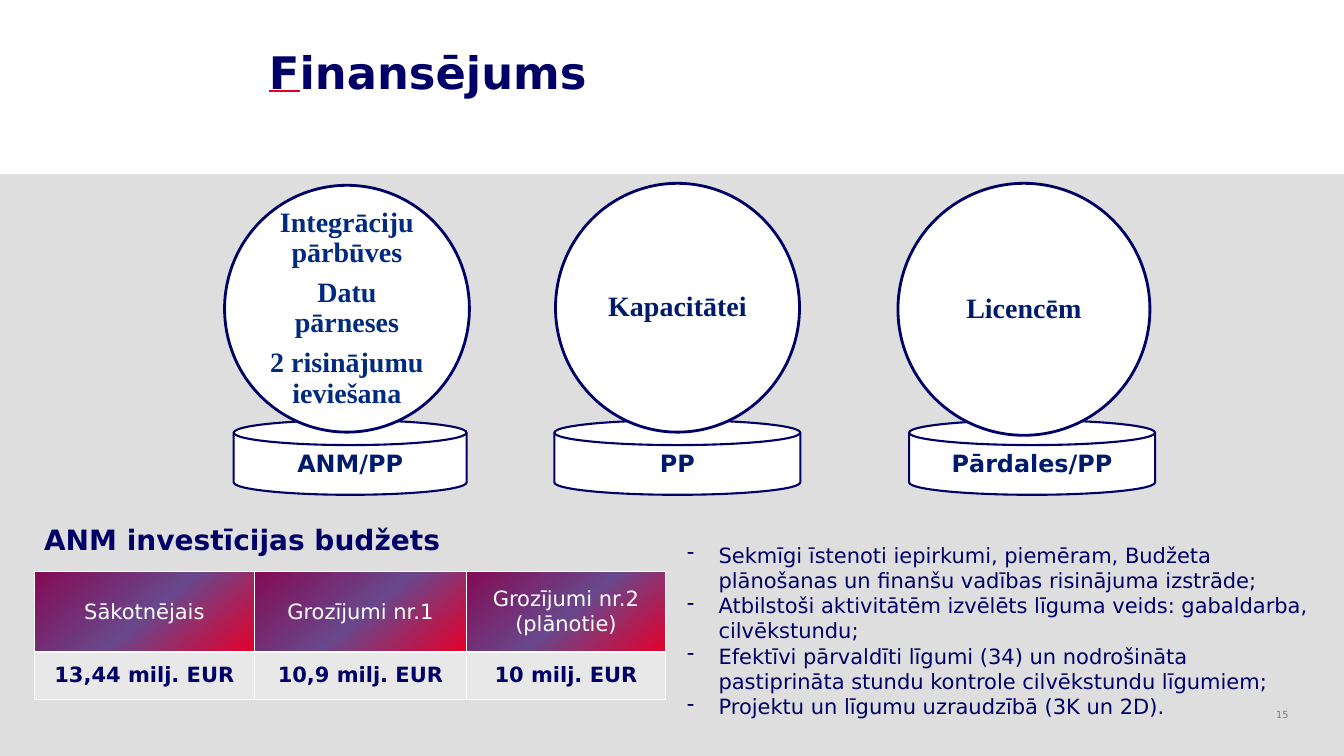
"""Build the funding slide: three funding pillars, a budget table and notes."""
from lxml.etree import SubElement
from pptx import Presentation
from pptx.dml.color import RGBColor
from pptx.enum.shapes import MSO_SHAPE as Shape
from pptx.enum.text import MSO_ANCHOR as Anchor, PP_ALIGN as Align
from pptx.oxml.ns import qn
from pptx.util import Cm, Pt

NAVY = RGBColor(0x00, 0x00, 0x66)
DARK_BLUE = RGBColor(0x00, 0x1B, 0x6C)
BLUE = RGBColor(0x00, 0x2A, 0x7E)
RED = RGBColor(0xE5, 0x00, 0x2B)
PLUM = RGBColor(0x83, 0x0B, 0x54)
VIOLET = RGBColor(0x69, 0x47, 0x8C)
WHITE = RGBColor(0xFF, 0xFF, 0xFF)
BAND_GREY = RGBColor(0xDE, 0xDE, 0xDE)
CELL_GREY = RGBColor(0xE8, 0xE8, 0xE8)
NUMBER_GREY = RGBColor(0x79, 0x79, 0x79)
SANS, SERIF = "DejaVu Sans", "Times New Roman"

TITLE = "Finansējums"
PAGE_NUMBER = "15"
BUDGET_HEADING = "ANM investīcijas budžets"
BUDGET = [
    ["Sākotnējais", "Grozījumi nr.1", "Grozījumi nr.2 (plānotie)"],
    ["13,44 milj. EUR", "10,9 milj. EUR", "10 milj. EUR"],
]
COLUMN_WIDTHS = [5.56, 5.33, 5.03]
ROW_HEIGHTS = [2.03, 1.19]
HEADER_STOPS = [(0, PLUM), (52, VIOLET), (100, RED)]
NOTES = [
    "Sekmīgi īstenoti iepirkumi, piemēram, Budžeta plānošanas un finanšu vadības risinājuma izstrāde;",
    "Atbilstoši aktivitātēm izvēlēts līguma veids: gabaldarba, cilvēkstundu;",
    "Efektīvi pārvaldīti līgumi (34) un nodrošināta pastiprināta stundu kontrole cilvēkstundu līgumiem;",
    "Projektu un līgumu uzraudzībā (3K un 2D).",
]
PILLARS = [
    {"disk": "ANM/PP", "disk_area": (5.89, 10.59, 5.87, 1.88), "color": BLUE,
     "circle": ["Integrāciju pārbūves", "Datu pārneses", "2 risinājumu ieviešana"],
     "circle_area": (5.66, 4.67, 6.17, 6.22)},
    {"disk": "PP", "disk_area": (13.97, 10.59, 6.2, 1.88), "color": DARK_BLUE,
     "circle": ["Kapacitātei"], "circle_area": (14, 4.62, 6.15, 6.27)},
    {"disk": "Pārdales/PP", "disk_area": (22.91, 10.59, 6.2, 1.88), "color": DARK_BLUE,
     "circle": ["Licencēm"], "circle_area": (22.63, 4.62, 6.35, 6.35)},
]


def add_color(parent, color):
    SubElement(parent, qn("a:srgbClr"), val=str(color))


def add_solid(parent, color):
    add_color(SubElement(parent, qn("a:solidFill")), color)


def write(frame, lines, size, color, font=SANS, bold=False, align=Align.LEFT,
          anchor=Anchor.TOP, inset=None, spacing=None, after=0, dash=False):
    """Fill a text frame with one paragraph per line."""
    frame.word_wrap = True
    frame.vertical_anchor = anchor
    if inset is not None:
        frame.margin_left = frame.margin_right = Cm(inset)
        frame.margin_top = frame.margin_bottom = Cm(inset)
    for index, line in enumerate(lines):
        para = frame.add_paragraph() if index else frame.paragraphs[0]
        para.alignment = align
        para.space_after = Pt(after)
        if spacing:
            para.line_spacing = spacing
        if dash:
            properties = para._p.get_or_add_pPr()
            properties.set("marL", str(Cm(0.79)))
            properties.set("indent", str(-Cm(0.79)))
            SubElement(properties, qn("a:buChar"), char="-")
        for text in [line] if isinstance(line, str) else line:
            span = para.add_run()
            span.text = text
            span.font.size = Pt(size)
            span.font.name = font
            span.font.bold = bold
            span.font.color.rgb = color


def add_text(page, area, lines, size, color, **style):
    box = page.shapes.add_textbox(*map(Cm, area))
    write(box.text_frame, lines, size, color, **style)
    return box


def add_figure(page, kind, area, fill, line_width=None):
    figure = page.shapes.add_shape(kind, *map(Cm, area))
    figure.shadow.inherit = False
    figure.fill.solid()
    figure.fill.fore_color.rgb = fill
    if line_width:
        figure.line.color.rgb = NAVY
        figure.line.width = Pt(line_width)
    else:
        figure.line.fill.background()
    return figure


def add_title(page):
    box = add_text(page, (6.53, 0.99, 19.48, 2.87), [(TITLE[0], TITLE[1:])], 32, NAVY, bold=True)
    initial = box.text_frame.paragraphs[0].runs[0]
    initial.font.underline = True
    underline = SubElement(initial._r.get_or_add_rPr(), qn("a:uFill"))
    add_solid(underline, RED)
    initial.font.fill._xPr.find(qn("a:solidFill")).addnext(underline)


def style_cell(cell, is_header):
    properties = cell._tc.get_or_add_tcPr()
    for side in ("lnL", "lnR", "lnT", "lnB"):
        add_solid(SubElement(properties, qn("a:" + side), w=str(Pt(1))), WHITE)
    if not is_header:
        add_solid(properties, CELL_GREY)
        return
    gradient = SubElement(properties, qn("a:gradFill"), rotWithShape="1")
    stops = SubElement(gradient, qn("a:gsLst"))
    for percent, color in HEADER_STOPS:
        add_color(SubElement(stops, qn("a:gs"), pos=str(percent * 1000)), color)
    SubElement(gradient, qn("a:lin"), ang=str(50 * 60000), scaled="0")


def add_budget(page):
    area = (0.86, 14.4, sum(COLUMN_WIDTHS), sum(ROW_HEIGHTS))
    table = page.shapes.add_table(len(BUDGET), len(COLUMN_WIDTHS), *map(Cm, area)).table
    for column, width in zip(table.columns, COLUMN_WIDTHS):
        column.width = Cm(width)
    for row_index, (row, height, texts) in enumerate(zip(table.rows, ROW_HEIGHTS, BUDGET)):
        row.height = Cm(height)
        is_header = row_index == 0
        for cell, text in zip(row.cells, texts):
            write(cell.text_frame, [text], 15, WHITE if is_header else NAVY,
                  bold=not is_header, align=Align.CENTER)
            cell.vertical_anchor = Anchor.MIDDLE
            style_cell(cell, is_header)


def add_pillar(page, pillar):
    disk = add_figure(page, Shape.FLOWCHART_MAGNETIC_DISK, pillar["disk_area"], WHITE, 1.5)
    write(disk.text_frame, [pillar["disk"]], 17, DARK_BLUE, bold=True,
          align=Align.CENTER, anchor=Anchor.BOTTOM)
    circle = add_figure(page, Shape.OVAL, pillar["circle_area"], WHITE, 2)
    write(circle.text_frame, pillar["circle"], 20, pillar["color"], font=SERIF, bold=True,
          align=Align.CENTER, anchor=Anchor.MIDDLE, inset=0.08, spacing=0.9, after=7)


def main():
    deck = Presentation()
    deck.slide_width, deck.slide_height = Cm(33.87), Cm(19.05)
    page = deck.slides.add_slide(deck.slide_layouts[6])
    add_title(page)
    add_figure(page, Shape.RECTANGLE, (0, 4.39, 33.87, 14.66), BAND_GREY)
    add_text(page, (31.6, 17.58, 1.12, 0.84), [PAGE_NUMBER], 7, NUMBER_GREY,
             align=Align.RIGHT, anchor=Anchor.MIDDLE)
    add_text(page, (0.86, 13.03, 12.22, 1.12), [BUDGET_HEADING], 20, NAVY, bold=True)
    add_text(page, (17.07, 13.54, 16.41, 4.75), NOTES, 15, NAVY, dash=True)
    add_budget(page)
    for pillar in PILLARS:
        add_pillar(page, pillar)
    deck.save("out.pptx")


if __name__ == "__main__":
    main()
